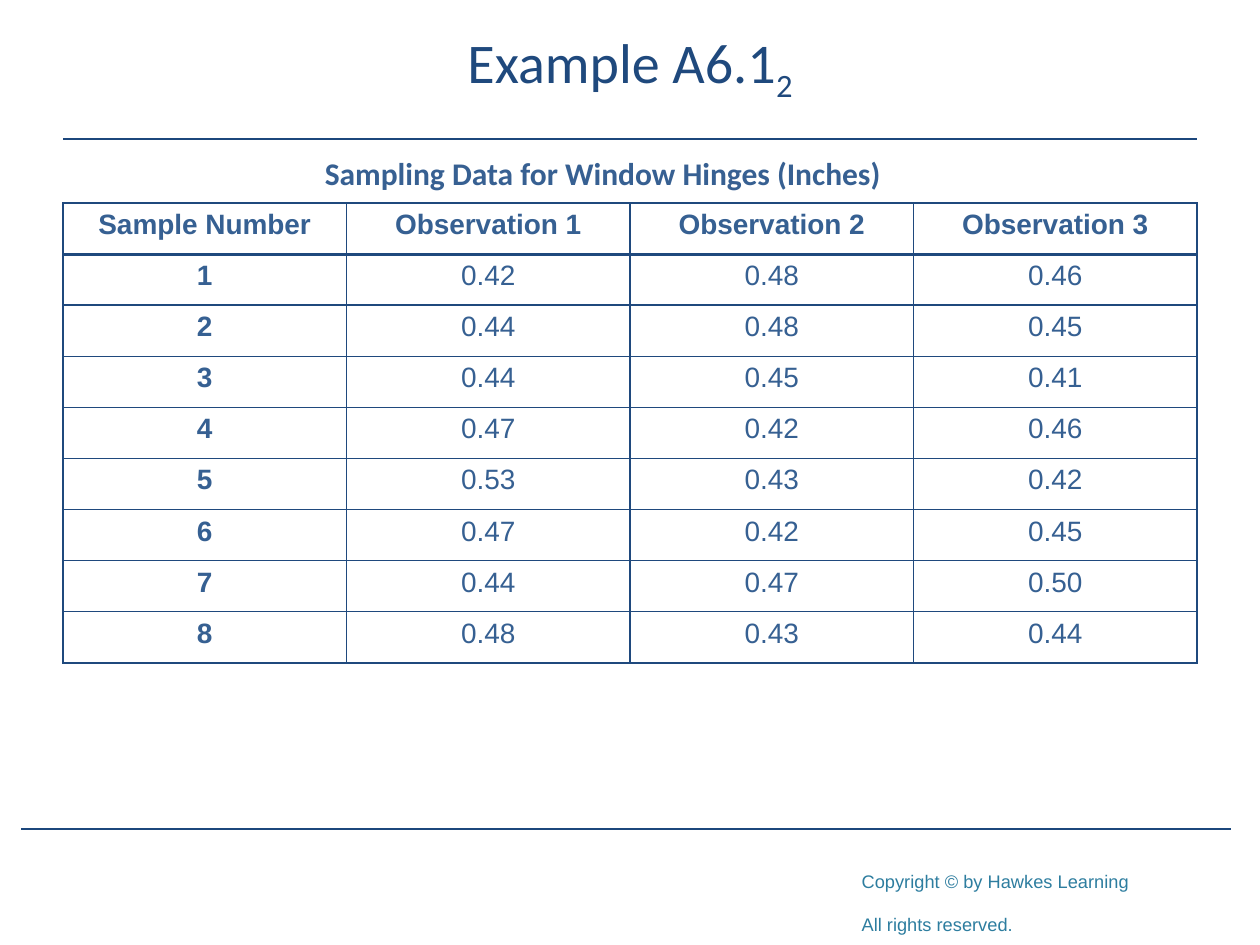
from lxml import etree
from pptx import Presentation
from pptx.dml.color import RGBColor
from pptx.enum.shapes import MSO_CONNECTOR
from pptx.enum.text import MSO_ANCHOR, MSO_AUTO_SIZE, PP_ALIGN
from pptx.oxml.ns import qn
from pptx.util import Pt

STRAIGHT = MSO_CONNECTOR.STRAIGHT
MIDDLE = MSO_ANCHOR.MIDDLE
FIXED = MSO_AUTO_SIZE.NONE
LEFT, CENTER = PP_ALIGN.LEFT, PP_ALIGN.CENTER

COLORS = {
    "title": "1F497D",
    "rule": "1C477C",
    "caption": "376092",
    "cell": "366092",
    "grid": "1F497D",
    "footer": "2D7D9F",
}
HEAD = ["Sample Number", "Observation 1", "Observation 2", "Observation 3"]
DATA = [
    ["0.42", "0.48", "0.46"],
    ["0.44", "0.48", "0.45"],
    ["0.44", "0.45", "0.41"],
    ["0.47", "0.42", "0.46"],
    ["0.53", "0.43", "0.42"],
    ["0.47", "0.42", "0.45"],
    ["0.44", "0.47", "0.50"],
    ["0.48", "0.43", "0.44"],
]


def style(para, size, face, color, bold=False, align=CENTER):
    """Set the font and alignment of a paragraph."""
    para.alignment = align
    font = para.font
    font.size, font.name, font.bold = Pt(size), face, bold
    font.color.rgb = RGBColor.from_string(COLORS[color])


def lower(run):
    """Make a run a subscript."""
    run._r.get_or_add_rPr().set("baseline", "-25000")


def add_title(slide):
    """Fill and place the title with its subscript."""
    title = slide.shapes.title
    title.left, title.top, title.width, title.height = Pt(36), Pt(8.64), Pt(648), Pt(72)
    frame = title.text_frame
    frame.auto_size, frame.vertical_anchor = FIXED, MIDDLE
    para = frame.paragraphs[0]
    para.add_run().text = "Example A6.1"
    sub = para.add_run()
    sub.text = "2"
    lower(sub)
    style(para, 32, "Calibri", "title")
    para.line_spacing = Pt(30)


def add_rule(slide, left, right, y):
    """Draw a horizontal rule."""
    rule = slide.shapes.add_connector(STRAIGHT, Pt(left), Pt(y), Pt(right), Pt(y))
    rule.line.width = Pt(1.25)
    rule.line.color.rgb = RGBColor.from_string(COLORS["rule"])
    etree.SubElement(rule._element.spPr, qn("a:effectLst"))


def add_text(slide, left, top, width, height, lines):
    """Add a wrapping text box and return its frame."""
    box = slide.shapes.add_textbox(Pt(left), Pt(top), Pt(width), Pt(height))
    frame = box.text_frame
    frame.word_wrap = True
    frame.text = "\n".join(lines)
    return frame


def add_border(cell, side, width):
    """Draw one border of a cell."""
    props = cell._tc.get_or_add_tcPr()
    line = etree.SubElement(props, qn(f"a:ln{side}"), w=str(Pt(width)))
    fill = etree.SubElement(line, qn("a:solidFill"))
    etree.SubElement(fill, qn("a:srgbClr"), val=COLORS["grid"])


def add_grid(slide):
    """Add the table of samples."""
    rows = [HEAD] + [[str(n), *vals] for n, vals in enumerate(DATA, 1)]
    shape = slide.shapes.add_table(
        len(rows), len(HEAD), Pt(36), Pt(116), Pt(648), Pt(29.2 * len(rows)))
    table = shape.table
    table.first_row = table.horz_banding = False
    for r, row in enumerate(rows):
        for c, text in enumerate(row):
            cell = table.cell(r, c)
            cell.text = text
            style(cell.text_frame.paragraphs[0], 16, "Arial", "cell", r == 0 or c == 0)
            widths = {"L": 1, "R": 1, "T": 2 if r == 1 else 1, "B": 2 if r == 0 else 1}
            for side, width in widths.items():
                add_border(cell, side, width)
            cell.fill.background()


def add_footer(slide):
    """Add the copyright lines."""
    lines = ["Copyright © by Hawkes Learning", "All rights reserved."]
    frame = add_text(slide, 485.28, 460.8, 221.76, 77.76, lines)
    frame.margin_top = Pt(24.3)
    for para in frame.paragraphs:
        style(para, 18, "Arial", "footer", align=LEFT)
        lower(para.runs[0])


def main():
    """Build and save the slide."""
    deck = Presentation()
    deck.slide_width, deck.slide_height = Pt(720), Pt(540)
    slide = deck.slides.add_slide(deck.slide_layouts[5])
    add_footer(slide)
    add_rule(slide, 36, 684, 79.2)
    add_rule(slide, 12.24, 703.44, 473.76)
    add_title(slide)
    frame = add_text(slide, 162, 84.24, 365.04, 28.8,
                     ["Sampling Data for Window Hinges (Inches)"])
    style(frame.paragraphs[0], 18, "Calibri", "caption", True)
    add_grid(slide)
    deck.save("out.pptx")


if __name__ == "__main__":
    main()
